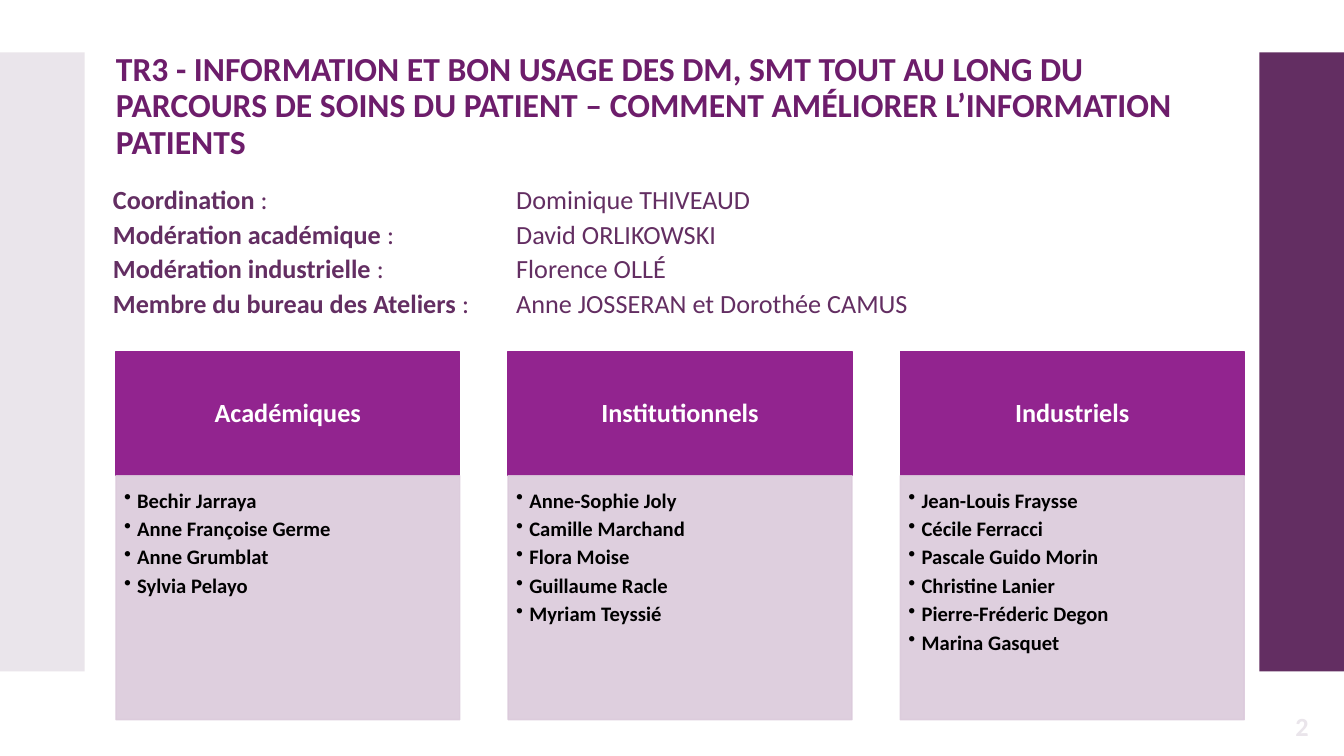
from lxml import etree
from pptx import Presentation
from pptx.dml.color import RGBColor
from pptx.enum import shapes, text
from pptx.oxml.ns import qn
from pptx.util import Inches, Pt

PLUM = RGBColor(0x63, 0x2E, 0x62)
TITLE_PURPLE = RGBColor(0x6D, 0x1D, 0x6B)
PURPLE = RGBColor(0x92, 0x24, 0x8F)
LILAC = RGBColor(0xDB, 0xCA, 0xDB)
PALE = RGBColor(0xEA, 0xE5, 0xEB)
WHITE = RGBColor(0xFF, 0xFF, 0xFF)
BLACK = RGBColor(0, 0, 0)

prs = Presentation()
prs.slide_width, prs.slide_height = Inches(13.33), Inches(7.5)
s = prs.slides.add_slide(prs.slide_layouts[6])


def add_rect(left, top, width, height, color, outline=False):
    sp = s.shapes.add_shape(shapes.MSO_SHAPE.RECTANGLE, Inches(left), Inches(top),
                            Inches(width), Inches(height))
    sp.shadow.inherit = False
    sp.fill.solid()
    sp.fill.fore_color.rgb = color
    if outline:
        sp.line.color.rgb = color
        sp.line.width = Pt(1)
    else:
        sp.line.fill.background()
    return sp


def write(sp, paragraphs, size, color, insets=(0, 0, 0, 0), spacing=1.0,
          align=text.PP_ALIGN.LEFT, anchor=text.MSO_ANCHOR.TOP):
    """Fill a shape with paragraphs, each a list of (text, bold) runs."""
    tf = sp.text_frame
    tf.word_wrap = True
    tf.vertical_anchor = anchor
    tf.margin_left, tf.margin_top, tf.margin_right, tf.margin_bottom = map(Inches, insets)
    for i, runs in enumerate(paragraphs):
        p = tf.add_paragraph() if i else tf.paragraphs[0]
        p.alignment = align
        p.line_spacing = spacing
        for content, bold in runs:
            r = p.add_run()
            r.text = content
            r.font.name = "Calibri"
            r.font.size = Pt(size)
            r.font.bold = bold
            r.font.color.rgb = color
    return tf


# Side bands
add_rect(12.49, 0.52, 0.84, 6.14, PLUM)
add_rect(0, 0.52, 0.84, 6.14, PALE)

# Title
title = s.shapes.add_textbox(Inches(1.15), Inches(0.52), Inches(11.14), Inches(0.52))
write(title, [[("TR3 - INFORMATION ET BON USAGE DES DM, SMT TOUT AU LONG DU PARCOURS DE SOINS "
                "DU PATIENT – COMMENT AMÉLIORER L’INFORMATION PATIENTS", True)]],
      24, TITLE_PURPLE, spacing=0.9)

# Roles, with the names aligned on a tab stop
roles = [
    ("Coordination", "Dominique THIVEAUD"),
    ("Modération académique", "David ORLIKOWSKI"),
    ("Modération industrielle", "Florence OLLÉ"),
    ("Membre du bureau des Ateliers", "Anne JOSSERAN et Dorothée CAMUS"),
]
box = s.shapes.add_textbox(Inches(0.99), Inches(1.72), Inches(10.73), Inches(1.77))
tf = write(box, [[(role, True), (f" :\t{name}", False)] for role, name in roles],
           18.7, PLUM, insets=(0.13, 0.07, 0.13, 0.07), spacing=1.1)
for p in tf.paragraphs:
    tabs = etree.SubElement(p._p.get_or_add_pPr(), qn("a:tabLst"))
    etree.SubElement(tabs, qn("a:tab"), pos=str(Inches(4)), algn="l")

# Member columns
columns = [
    ("Académiques", ["Bechir Jarraya", "Anne Françoise Germe", "Anne Grumblat",
                     "Sylvia Pelayo"]),
    ("Institutionnels", ["Anne-Sophie Joly", "Camille Marchand", "Flora Moise",
                         "Guillaume Racle", "Myriam Teyssié"]),
    ("Industriels", ["Jean-Louis Fraysse", "Cécile Ferracci", "Pascale Guido Morin",
                     "Christine Lanier", "Pierre-Fréderic Degon", "Marina Gasquet"]),
]
for i, (heading, members) in enumerate(columns):
    left = 1.15 + i * 3.89
    header = add_rect(left, 3.49, 3.41, 1.23, PURPLE, outline=True)
    write(header, [[(heading, True)]], 18.7, WHITE, insets=(0.15, 0.08, 0.15, 0.08),
          spacing=0.9, align=text.PP_ALIGN.CENTER, anchor=text.MSO_ANCHOR.MIDDLE)

    body = add_rect(left, 4.72, 3.41, 2.42, LILAC, outline=True)
    for color in body._element.spPr.iter(qn("a:srgbClr")):
        etree.SubElement(color, qn("a:alpha"), val="90000")
    tf = write(body, [[(member, True)] for member in members], 14.7, BLACK,
               insets=(0.08, 0.08, 0.1, 0.12), spacing=1.15)
    for p in tf.paragraphs:
        pPr = p._p.get_or_add_pPr()
        pPr.set("marL", str(Inches(0.13)))
        pPr.set("indent", str(Inches(-0.14)))
        etree.SubElement(pPr, qn("a:buChar"), char="•")

# Slide number
number = s.shapes.add_textbox(Inches(12.49), Inches(7), Inches(0.49), Inches(0.4))
write(number, [[("2", True)]], 18.7, PALE, align=text.PP_ALIGN.RIGHT,
      anchor=text.MSO_ANCHOR.MIDDLE)

prs.save("out.pptx")
